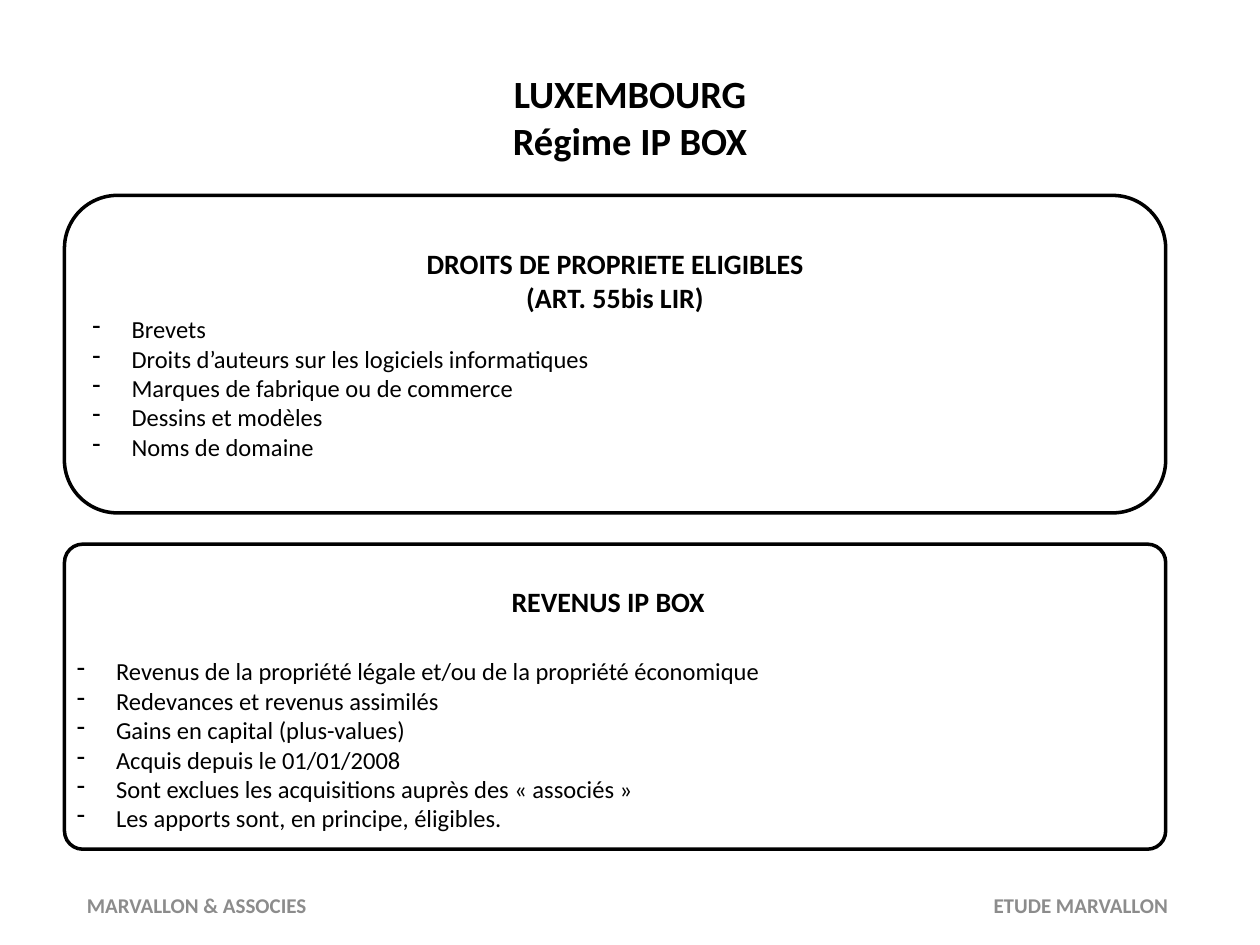
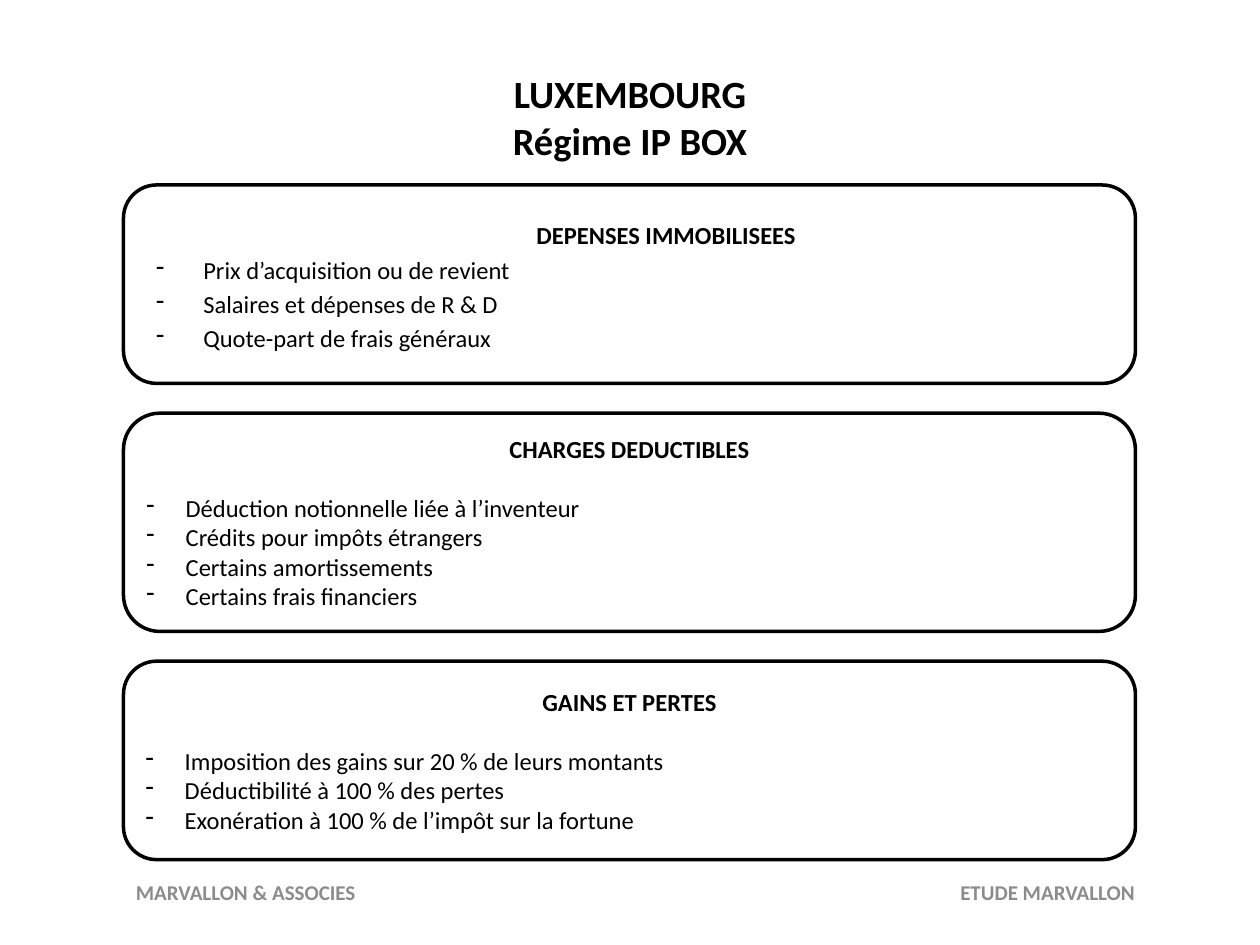
"""Builds two slides on the Luxembourg IP box regime."""
from dataclasses import dataclass

from lxml import etree
from pptx import Presentation
from pptx.dml.color import RGBColor
from pptx.enum.shapes import MSO_SHAPE
from pptx.enum.text import MSO_ANCHOR, PP_ALIGN
from pptx.oxml.ns import qn
from pptx.util import Cm, Pt

ROUNDED = MSO_SHAPE.ROUNDED_RECTANGLE
TOP, MIDDLE = MSO_ANCHOR.TOP, MSO_ANCHOR.MIDDLE
LEFT, CENTER = PP_ALIGN.LEFT, PP_ALIGN.CENTER
TITLE_ONLY = 5


@dataclass(frozen=True)
class Theme:
    font: str = "Calibri"
    ink: RGBColor = RGBColor(0x00, 0x00, 0x00)
    paper: RGBColor = RGBColor(0xFF, 0xFF, 0xFF)
    muted: RGBColor = RGBColor(0x8C, 0x8C, 0x8C)
    title_size: int = 22
    heading_size: int = 16
    body_size: int = 14
    footer_size: int = 12
    outline: int = 2


class Deck:
    def __init__(self, theme):
        self.theme = theme
        self.prs = Presentation()
        self.prs.slide_width, self.prs.slide_height = Cm(25.4), Cm(19.05)
        self.slide = None

    def run(self, paragraph, text, size, bold=False, color=None):
        run = paragraph.add_run()
        run.text = text
        run.font.name = self.theme.font
        run.font.size = Pt(size)
        run.font.bold = bold
        run.font.color.rgb = color or self.theme.ink

    def new_slide(self, *title_lines):
        self.slide = self.prs.slides.add_slide(self.prs.slide_layouts[TITLE_ONLY])
        title = self.slide.shapes.title
        title.left, title.top = Cm(1.27), Cm(0.76)
        title.width, title.height = Cm(22.86), Cm(3.18)
        title.text_frame.vertical_anchor = MIDDLE
        paragraph = title.text_frame.paragraphs[0]
        paragraph.alignment = CENTER
        for number, line in enumerate(title_lines):
            if number:
                paragraph.add_line_break()
            self.run(paragraph, line, self.theme.title_size, bold=True)

    def panel(self, left, top, width, height, corner=None):
        panel = self.slide.shapes.add_shape(
            ROUNDED, Cm(left), Cm(top), Cm(width), Cm(height))
        panel.shadow.inherit = False
        panel.fill.solid()
        panel.fill.fore_color.rgb = self.theme.paper
        panel.line.color.rgb = self.theme.ink
        panel.line.width = Pt(self.theme.outline)
        if corner is not None:
            panel.adjustments[0] = corner
        return panel.text_frame

    def text_area(self, left, top, width, height, anchor=TOP):
        area = self.slide.shapes.add_textbox(
            Cm(left), Cm(top), Cm(width), Cm(height)).text_frame
        area.word_wrap = True
        area.vertical_anchor = anchor
        return area

    def topic(self, frame, headings, items, size, gap=0, item_gap=0, indent=0.79):
        frame.word_wrap = True
        for number, heading in enumerate(headings):
            paragraph = frame.add_paragraph() if number else frame.paragraphs[0]
            paragraph.alignment = CENTER
            self.run(paragraph, heading, size, bold=True)
        paragraph.space_after = Pt(gap)
        for item in items:
            paragraph = frame.add_paragraph()
            paragraph.alignment = LEFT
            paragraph.space_before = Pt(item_gap)
            self.run(paragraph, item, self.theme.body_size)
            self.dash(paragraph, indent)

    def dash(self, paragraph, indent):
        properties = paragraph._p.get_or_add_pPr()
        properties.set("marL", str(Cm(indent)))
        properties.set("indent", str(-Cm(indent)))
        etree.SubElement(properties, qn("a:buChar")).set("char", "-")

    def footer(self, left, top, width, height, right_stop):
        area = self.text_area(left, top, width, height, MIDDLE)
        paragraph = area.paragraphs[0]
        stops = etree.SubElement(paragraph._p.get_or_add_pPr(), qn("a:tabLst"))
        stop = etree.SubElement(stops, qn("a:tab"))
        stop.set("pos", str(Cm(right_stop)))
        stop.set("algn", "r")
        for text in ("MARVALLON & ASSOCIES", "\tETUDE MARVALLON"):
            self.run(paragraph, text, self.theme.footer_size, True, self.theme.muted)


def eligible_rights_and_income(deck):
    """Shows the eligible rights and the income covered."""
    deck.new_slide("LUXEMBOURG", "Régime IP BOX")
    left, top, width, gap = 1.3, 3.94, 22.2, 0.63
    rights_height, income_height = 6.4, 6.15
    rights = deck.panel(left, top, width, rights_height)
    rights.vertical_anchor = MIDDLE
    deck.topic(rights, ["DROITS DE PROPRIETE ELIGIBLES", "(ART. 55bis LIR)"], [
        "Brevets",
        "Droits d’auteurs sur les logiciels informatiques",
        "Marques de fabrique ou de commerce",
        "Dessins et modèles",
        "Noms de domaine",
    ], deck.theme.heading_size)
    income_top = top + rights_height + gap
    deck.panel(left, income_top, width, income_height, corner=0.06)
    income = deck.text_area(left, income_top, 21.92, 6)
    income.margin_top = Cm(0.81)
    deck.topic(income, ["REVENUS IP BOX"], [
        "Revenus de la propriété légale et/ou de la propriété économique",
        "Redevances et revenus assimilés",
        "Gains en capital (plus-values)",
        "Acquis depuis le 01/01/2008",
        "Sont exclues les acquisitions auprès des « associés »",
        "Les apports sont, en principe, éligibles.",
    ], deck.theme.heading_size, gap=22)
    deck.footer(1.5, 17.73, 22.81, 1.02, right_stop=21.8)


def expenses_and_gains(deck):
    """Shows capitalised expenses, deductible charges, gains and losses."""
    deck.new_slide("LUXEMBOURG", "Régime IP BOX")
    left, top, width, gap = 2.49, 3.73, 20.4, 0.6
    size = deck.theme.body_size
    expenses_height = 4
    deck.panel(left, top, width, expenses_height)
    expenses = deck.text_area(2.9, 4.32, 21.06, 3.4)
    deck.topic(expenses, ["DEPENSES IMMOBILISEES"], [
        "Prix d’acquisition ou de revient",
        "Salaires et dépenses de R & D",
        "Quote-part de frais généraux",
    ], size, item_gap=2.8, indent=0.95)
    top += expenses_height + gap
    for heading, height, items in (
        ("CHARGES DEDUCTIBLES", 4.4, [
            "Déduction notionnelle liée à l’inventeur",
            "Crédits pour impôts étrangers",
            "Certains amortissements",
            "Certains frais financiers",
        ]),
        ("GAINS ET PERTES", 4, [
            "Imposition des gains sur 20 % de leurs montants",
            "Déductibilité à 100 % des pertes",
            "Exonération à 100 % de l’impôt sur la fortune",
        ]),
    ):
        frame = deck.panel(left, top, width, height)
        frame.vertical_anchor = MIDDLE
        deck.topic(frame, [heading], items, size, gap=17)
        top += height + gap
    deck.footer(left, 17.32, 22, 1.35, right_stop=20.14)


def main():
    """Builds and saves the deck."""
    deck = Deck(Theme())
    eligible_rights_and_income(deck)
    expenses_and_gains(deck)
    deck.prs.save("out.pptx")


if __name__ == "__main__":
    main()
